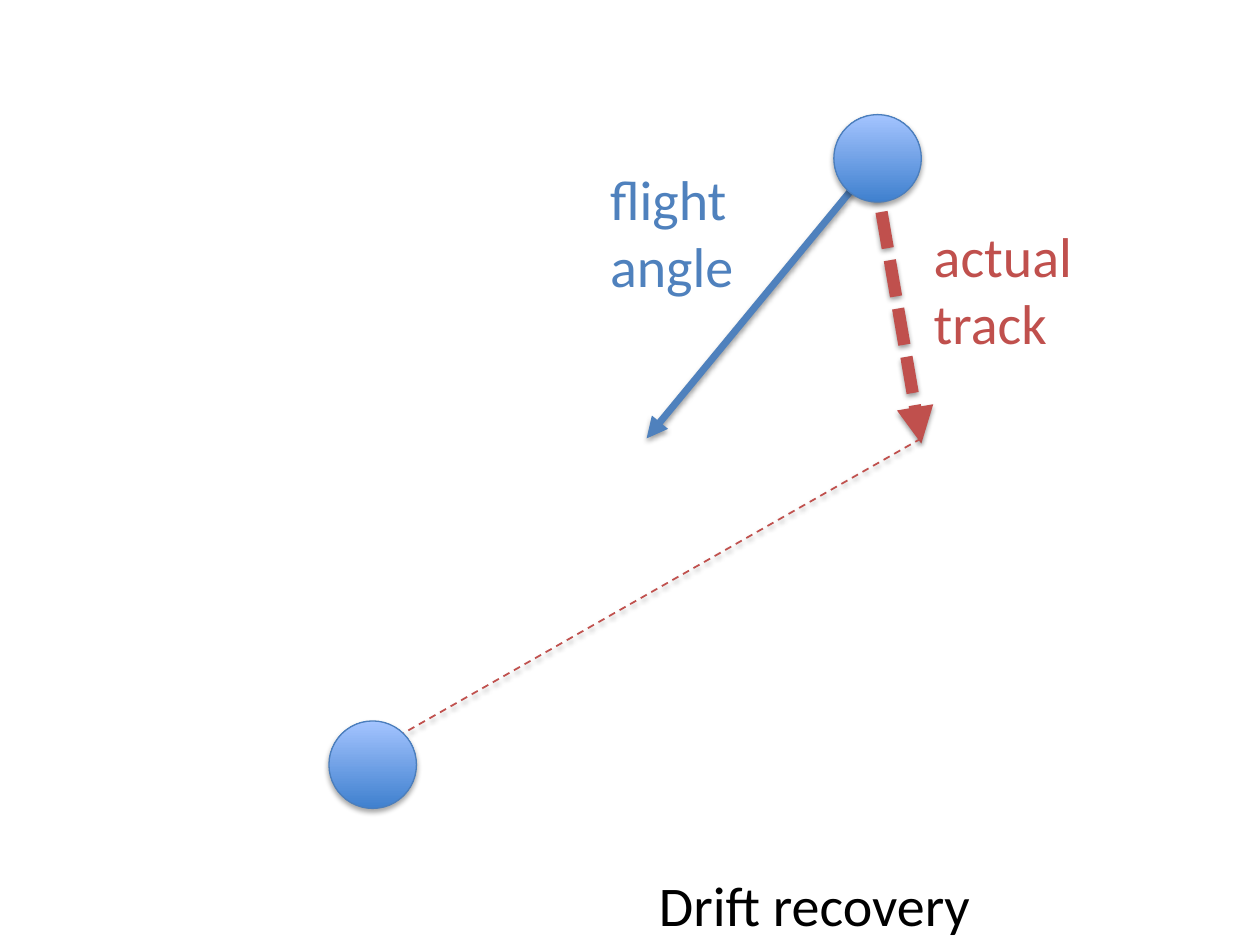
from dataclasses import dataclass

from lxml.etree import SubElement
from pptx import Presentation
from pptx.dml.color import RGBColor
from pptx.enum.dml import MSO_LINE
from pptx.enum.shapes import MSO_CONNECTOR, MSO_SHAPE
from pptx.enum.text import MSO_AUTO_SIZE
from pptx.oxml import parse_xml
from pptx.oxml.ns import nsdecls, qn
from pptx.util import Pt


@dataclass(frozen=True)
class Theme:
    font: str = "Calibri"
    size: float = 32
    black: str = "000000"
    blue: str = "4F81BD"
    red: str = "C0504D"
    ball_line: str = "4B7EBC"
    ball_stops: tuple = ("3F80CE", "A4C4FF")


theme = Theme()


def rgb(value):
    return RGBColor.from_string(value)


def add_shadow(sp, distance, opacity):
    """Give the shape a soft shadow straight below it."""
    sp._element.spPr.append(parse_xml(
        f'<a:effectLst {nsdecls("a")}>'
        f'<a:outerShdw blurRad="{Pt(3.1)}" dist="{Pt(distance)}" dir="5400000" rotWithShape="0">'
        f'<a:srgbClr val="{theme.black}"><a:alpha val="{opacity * 1000}"/></a:srgbClr>'
        '</a:outerShdw></a:effectLst>'))


prs = Presentation()
prs.slide_width, prs.slide_height = Pt(720), Pt(540)
s = prs.slides.add_slide(prs.slide_layouts[6])

# Lines: flight angle, actual track, way home
lines = [
    ((501, 91), (369.5, 250.5), theme.blue, 4, None, True),
    ((499, 93.5), (526.5, 253.5), theme.red, 7, MSO_LINE.SQUARE_DOT, True),
    ((526.5, 250.5), (230.5, 419), theme.red, 1, MSO_LINE.DASH, False),
]
for start, end, color, width, dash, arrow in lines:
    sp = s.shapes.add_connector(MSO_CONNECTOR.STRAIGHT, *map(Pt, start + end))
    sp.line.color.rgb = rgb(color)
    sp.line.width = Pt(width)
    if dash:
        sp.line.dash_style = dash
    if arrow:
        SubElement(sp.line._ln, qn("a:tailEnd"), type="triangle")
    add_shadow(sp, 1.6, 38)

# Balls: target and flyer
diameter = 50
for left, top in [(188, 412), (476.5, 65.5)]:
    sp = s.shapes.add_shape(MSO_SHAPE.OVAL, *map(Pt, (left, top, diameter, diameter)))
    sp.fill.gradient()
    sp.fill.gradient_angle = 90
    for stop, color in zip(sp.fill.gradient_stops, theme.ball_stops):
        stop.color.rgb = rgb(color)
    sp.line.color.rgb = rgb(theme.ball_line)
    sp.line.width = Pt(0.75)
    add_shadow(sp, 1.8, 35)

# Labels
labels = [
    (["Drift recovery"], (369.5, 494, 193.5, 46), theme.black),
    (["flight", "angle"], (341.5, 90.5, 87, 85), theme.blue),
    (["actual", "track"], (526.5, 123, 94.5, 85), theme.red),
]
for words, box, color in labels:
    tf = s.shapes.add_textbox(*map(Pt, box)).text_frame
    tf.word_wrap = False
    tf.auto_size = MSO_AUTO_SIZE.SHAPE_TO_FIT_TEXT
    tf.text = "\n".join(words)
    for p in tf.paragraphs:
        r = p.runs[0]
        for name, value in {"name": theme.font, "size": Pt(theme.size)}.items():
            setattr(r.font, name, value)
        r.font.color.rgb = rgb(color)

prs.save("out.pptx")
